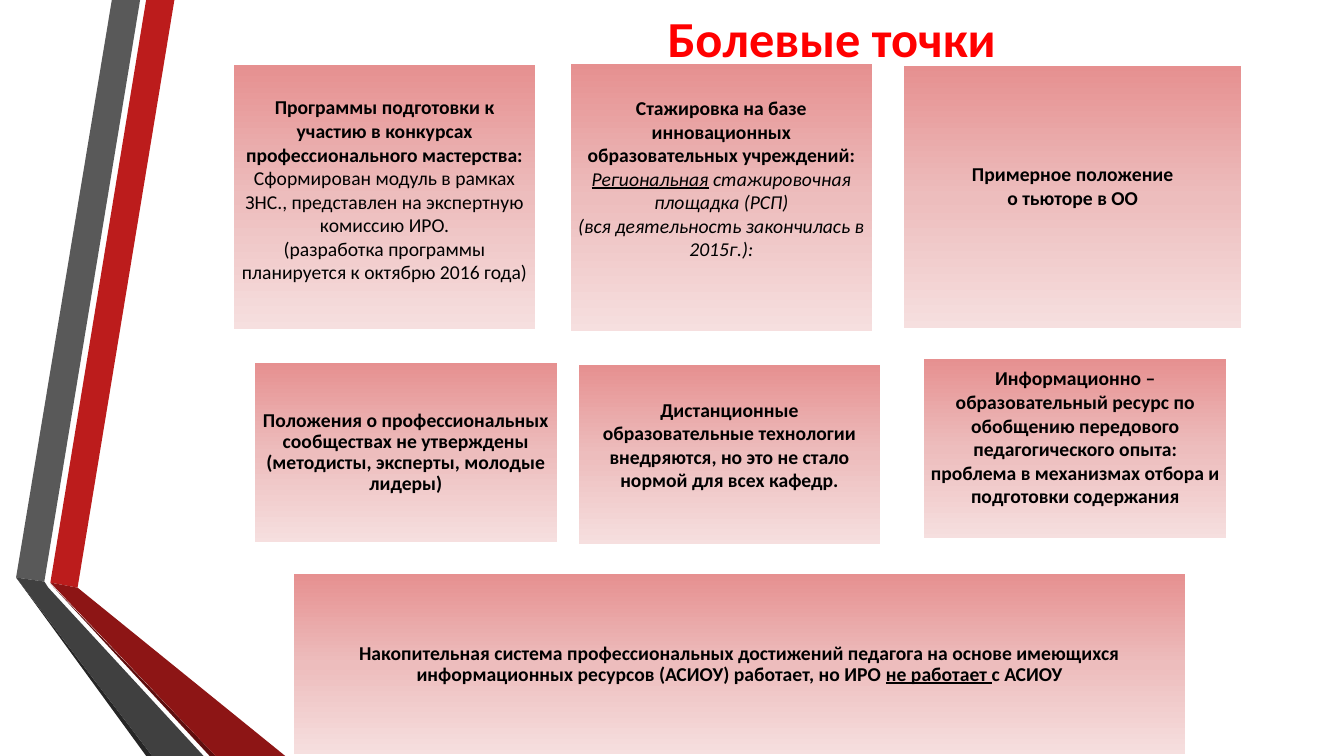
import copy
import pptx
import pptx.util
import pptx.dml.color
import pptx.enum.shapes
import pptx.enum.text
from pptx.util import Inches, Pt

TITLE = "Болевые точки"
BOLD = {"bold": True}
PLAIN = {"bold": False}
SLANT = {"italic": True}
LINED = {"underline": True}
LOOSE, TIGHT = 1.0, 0.9

CARDS = [
    ((2.31, 0.64, 3.01, 2.63), 0.15, LOOSE, [
        [("Программы подготовки к участию в конкурсах профессионального мастерства:", BOLD)],
        [("Сформирован модуль в рамках ЗНС., представлен на экспертную комиссию ИРО.", PLAIN)],
        [("(разработка программы планируется к октябрю 2016 года)", PLAIN)],
    ]),
    ((5.65, 0.63, 3.01, 2.66), 0.38, LOOSE, [
        [("Стажировка на базе инновационных образовательных учреждений:", BOLD)],
        [("Региональная", {**SLANT, **LINED}), (" стажировочная площадка (РСП)", SLANT)],
        [("(вся деятельность закончилась в 2015г.):", SLANT)],
    ]),
    ((8.96, 0.65, 3.36, 2.61), 0.23, LOOSE, [
        [("Примерное положение", BOLD)],
        [("о тьюторе в ОО", BOLD)],
    ]),
    ((2.52, 3.59, 3.01, 1.8), 0, TIGHT, [
        [("Положения о профессиональных сообществах не утверждены (методисты, эксперты, молодые лидеры)", BOLD)],
    ]),
    ((5.73, 3.61, 3.01, 1.8), 0.2, LOOSE, [
        [("Дистанционные образовательные технологии внедряются, но это не стало нормой для всех кафедр.", BOLD)],
    ]),
    ((9.16, 3.55, 3.01, 1.8), 0.23, LOOSE, [
        [("Информационно – образовательный ресурс по обобщению передового педагогического опыта: "
          "проблема в механизмах отбора и подготовки содержания", BOLD)],
    ]),
    ((2.91, 5.69, 8.85, 1.8), 0, TIGHT, [
        [("Накопительная система профессиональных достижений педагога на основе имеющихся "
          "информационных ресурсов (АСИОУ) работает, но ИРО ", BOLD),
         ("не работает ", {**BOLD, **LINED}), ("с АСИОУ", BOLD)],
    ]),
]

BANDS = [
    ("BC1C1C", [(0.5, 5.78), (0.77, 5.83), (1.73, 0), (1.45, 0)]),
    ("595959", [(1.39, 0), (1.11, 0), (0.16, 5.73), (0.44, 5.77)]),
    ("262626", [(0.16, 5.73), (1.45, 7.5), (1.51, 7.5)]),
    ("5E0E0E", [(0.5, 5.79), (2.08, 7.5), (2.14, 7.5)]),
    ("8D1515", [(0.5, 5.78), (2.14, 7.5), (2.83, 7.5), (0.77, 5.83)]),
    ("404040", [(2.02, 7.5), (0.48, 5.83), (0.44, 5.77), (0.16, 5.73), (1.51, 7.5)]),
]

SHADE = [(0, "E69090"), (0.5, "EDBDBD"), (1, "F6DFDF")]
PAD = 0.06


def tint(code):
    return pptx.dml.color.RGBColor.from_string(code)


def apply(thing, form):
    for name, value in form.items():
        setattr(thing, name, value)


def place(shape, box):
    apply(shape, dict(zip(("left", "top", "width", "height"), map(Inches, box))))


def write(para, text, size, color, form):
    run = para.add_run()
    run.text = text
    apply(run.font, {"name": "Calibri", "size": Pt(size), **form})
    run.font.color.rgb = tint(color)


def add_band(slide, color, points):
    spots = [(Inches(x), Inches(y)) for x, y in points]
    pen = slide.shapes.build_freeform(*spots[0])
    pen.add_line_segments(spots[1:], close=True)
    band = pen.convert_to_shape()
    band.shadow.inherit = False
    band.fill.solid()
    band.fill.fore_color.rgb = tint(color)
    band.line.fill.background()


def shade(shape):
    fill = shape.fill
    fill.gradient()
    fill.gradient_angle = 270
    stops = shape._element.spPr.find(".//" + pptx.oxml.ns.qn("a:gsLst"))
    stops.append(copy.deepcopy(stops[-1]))
    for stop, (spot, color) in zip(fill.gradient_stops, SHADE):
        stop.position = spot
        stop.color.rgb = tint(color)


def add_card(slide, box, lift, pitch, paras):
    card = slide.shapes.add_shape(
        pptx.enum.shapes.MSO_SHAPE.RECTANGLE, *map(Inches, box))
    card.shadow.inherit = False
    shade(card)
    card.line.color.rgb = tint("FFFFFF")
    card.line.width = Pt(1.25)
    frame = card.text_frame
    apply(frame, {
        "word_wrap": True,
        "vertical_anchor": pptx.enum.text.MSO_ANCHOR.MIDDLE,
        "margin_left": Inches(PAD),
        "margin_right": Inches(PAD),
        "margin_top": Inches(PAD),
        "margin_bottom": Inches(PAD + lift),
    })
    for i, runs in enumerate(paras):
        para = frame.add_paragraph() if i else frame.paragraphs[0]
        apply(para, {"alignment": pptx.enum.text.PP_ALIGN.CENTER, "line_spacing": pitch})
        for text, form in runs:
            write(para, text, 14, "000000", form)


def main():
    deck = pptx.Presentation()
    apply(deck, {"slide_width": Inches(13.33), "slide_height": Inches(7.5)})
    slide = deck.slides.add_slide(deck.slide_layouts[5])
    for band in BANDS:
        add_band(slide, *band)
    title = slide.shapes.title
    place(title, (3.92, 0, 8.66, 0.74))
    title.text_frame.vertical_anchor = pptx.enum.text.MSO_ANCHOR.MIDDLE
    head = title.text_frame.paragraphs[0]
    head.alignment = pptx.enum.text.PP_ALIGN.CENTER
    write(head, TITLE, 36, "FF0000", BOLD)
    for card in CARDS:
        add_card(slide, *card)
    deck.save("out.pptx")


if __name__ == "__main__":
    main()
